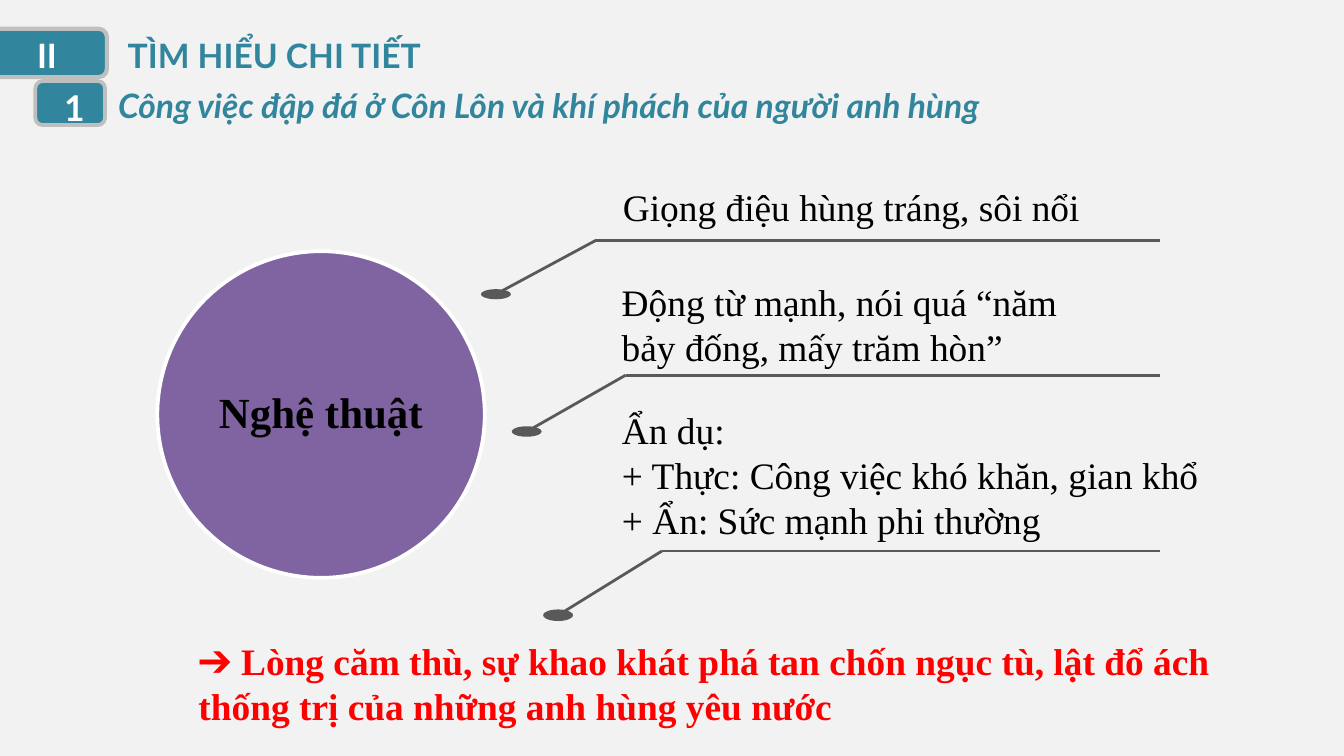
from dataclasses import dataclass

from lxml import etree
from pptx import Presentation
from pptx.dml.color import RGBColor
from pptx.enum.shapes import MSO_CONNECTOR, MSO_SHAPE
from pptx.enum.text import MSO_ANCHOR, MSO_AUTO_SIZE, PP_ALIGN
from pptx.oxml.ns import qn
from pptx.shapes.autoshape import Shape
from pptx.shapes.shapetree import SlideShapes
from pptx.util import Pt

LINE = MSO_CONNECTOR.STRAIGHT
OVAL = MSO_SHAPE.OVAL
ROUND = MSO_SHAPE.ROUNDED_RECTANGLE
TAB = MSO_SHAPE.ROUND_2_SAME_RECTANGLE
LEFT, MID = PP_ALIGN.LEFT, PP_ALIGN.CENTER
TOP, CENTER = MSO_ANCHOR.TOP, MSO_ANCHOR.MIDDLE
FIXED = MSO_AUTO_SIZE.NONE

SANS, SERIF = "Lato", "Times New Roman"
TEAL, GREY, WHITE = "31859C", "595959", "FFFFFF"
SILVER, PURPLE, BLACK, RED = "BFBFBF", "8064A2", "000000", "FF0000"
PAPER = "F2F2F2"
RIGHT = 621.4


@dataclass(frozen=True)
class Box:
    x: float
    y: float
    w: float
    h: float


@dataclass(frozen=True)
class Leader:
    dot_x: float
    dot_y: float
    bend_x: float
    bend_y: float
    dot_h: float


@dataclass(frozen=True)
class Note:
    box: Box
    text: str
    color: str = BLACK
    bold: bool = False


def hue(code: str) -> RGBColor:
    return RGBColor.from_string(code)


def place(shape: Shape, box: Box) -> None:
    shape.left, shape.top = Pt(box.x), Pt(box.y)
    shape.width, shape.height = Pt(box.w), Pt(box.h)


def write(shape: Shape, text: str, *, size: float = 20, color: str = BLACK,
          font: str = SERIF, bold: bool = False, italic: bool = False,
          align: PP_ALIGN = LEFT, anchor: MSO_ANCHOR = TOP,
          wrap: bool = True, space: float = 1.0) -> None:
    frame = shape.text_frame
    frame.text = text
    frame.word_wrap = wrap
    frame.auto_size = FIXED
    frame.vertical_anchor = anchor
    for para in frame.paragraphs:
        props = para._p.get_or_add_pPr()
        props.set("marL", "0")
        props.set("indent", "0")
        etree.SubElement(props, qn("a:buNone"))
        para.alignment = align
        para.line_spacing = space
        para.space_before = para.space_after = Pt(0)
        for run in para.runs:
            face = run.font
            face.name, face.size = font, Pt(size)
            face.bold, face.italic = bold, italic
            face.color.rgb = hue(color)


def label(shapes: SlideShapes, box: Box, text: str, **look) -> None:
    area = shapes.add_textbox(Pt(box.x), Pt(box.y), Pt(box.w), Pt(box.h))
    write(area, text, **look)


def draw(shapes: SlideShapes, kind: MSO_SHAPE, box: Box, fill: str,
         edge: str = "", width: float = 2) -> Shape:
    shape = shapes.add_shape(kind, Pt(box.x), Pt(box.y), Pt(box.w), Pt(box.h))
    shape.shadow.inherit = False
    shape.fill.solid()
    shape.fill.fore_color.rgb = hue(fill)
    if edge:
        shape.line.color.rgb = hue(edge)
        shape.line.width = Pt(width)
    else:
        shape.line.fill.background()
    return shape


def rule(shapes: SlideShapes, x1: float, y1: float, x2: float, y2: float) -> None:
    line = shapes.add_connector(LINE, Pt(x1), Pt(y1), Pt(x2), Pt(y2))
    line.line.color.rgb = hue(GREY)
    line.line.width = Pt(1.5)
    etree.SubElement(line._element.spPr, qn("a:effectLst"))


def lead(shapes: SlideShapes, item: Leader) -> None:
    dot = Box(item.dot_x - 8, item.dot_y - item.dot_h / 2, 16, item.dot_h)
    draw(shapes, OVAL, dot, GREY)
    rule(shapes, item.bend_x, item.bend_y, item.dot_x, item.dot_y)
    rule(shapes, item.bend_x, item.bend_y, RIGHT, item.bend_y)


LEADERS = [
    Leader(265.7, 157.6, 319, 128.9, 5.4),
    Leader(282.2, 231.2, 335.2, 201, 5.6),
    Leader(299, 329.6, 354.6, 295.2, 6.2),
]

NOTES = [
    Note(Box(326.6, 95, 277, 31.5), "Giọng điệu hùng tráng, sôi nổi"),
    Note(Box(326, 146.2, 277, 55.7),
         "Động từ mạnh, nói quá “năm bảy đống, mấy trăm hòn”"),
    Note(Box(99.2, 338.6, 584, 55.7),
         "➔ Lòng căm thù, sự khao khát phá tan chốn ngục tù, lật đổ ách "
         "thống trị của những anh hùng yêu nước", RED, True),
]

POINTS = "\n".join([
    "Ẩn dụ:",
    "+ Thực: Công việc khó khăn, gian khổ",
    "+ Ẩn: Sức mạnh phi thường",
])


def main() -> None:
    deck = Presentation()
    deck.slide_width, deck.slide_height = Pt(720), Pt(405)
    slide = deck.slides.add_slide(deck.slide_layouts[1])
    slide.background.fill.solid()
    slide.background.fill.fore_color.rgb = hue(PAPER)
    shapes = slide.shapes

    title, body = shapes.title, slide.placeholders[1]
    place(title, Box(61.2, 15.1, 202.3, 29.1))
    write(title, "TÌM HIỂU CHI TIẾT", size=18, color=TEAL, font=SANS, bold=True)
    place(body, Box(326, 214.7, 351.4, 80))
    write(body, POINTS)

    tab = draw(shapes, TAB, Box(13, -2.9, 25.9, 62.6), TEAL, SILVER, 2.25)
    tab.rotation = 90
    label(shapes, Box(0, 15.1, 50.4, 29.1), "II", size=18, color=WHITE,
          font=SANS, bold=True, align=MID)

    label(shapes, Box(56.2, 41.8, 593.3, 29.1),
          "Công việc đập đá ở Côn Lôn và khí phách của người anh hùng",
          size=18, color=TEAL, font=SANS, bold=True, italic=True)
    draw(shapes, ROUND, Box(18.9, 43.4, 37.4, 23.6), TEAL, SILVER)
    label(shapes, Box(26.6, 42.5, 26.6, 30.2), "1", size=19, color=WHITE,
          font=SANS, bold=True, align=MID, wrap=False)

    disc = draw(shapes, OVAL, Box(84.3, 134.6, 175.4, 175), PURPLE, WHITE)
    write(disc, "Nghệ thuật", size=23, bold=True, align=MID, anchor=CENTER,
          space=0.9)

    for item in LEADERS:
        lead(shapes, item)
    for note in NOTES:
        label(shapes, note.box, note.text, color=note.color, bold=note.bold)

    deck.save("out.pptx")


if __name__ == "__main__":
    main()
